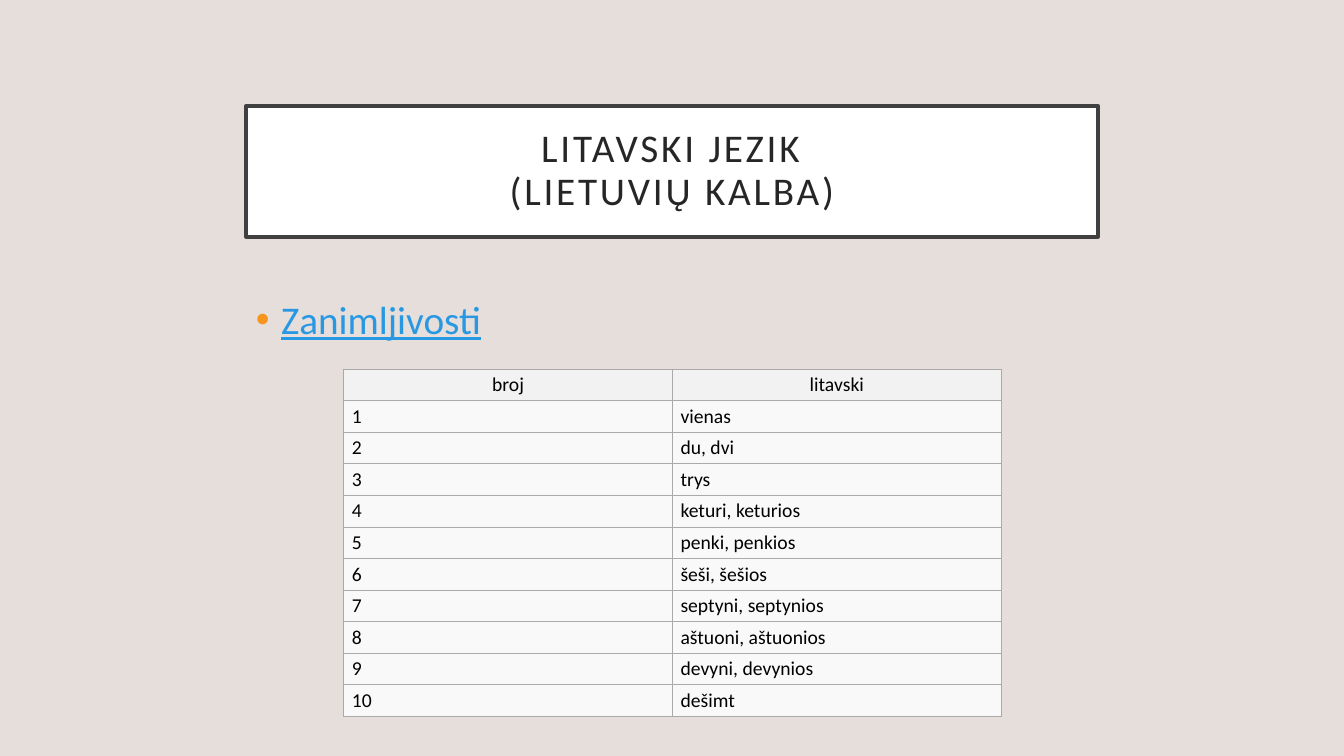
from lxml.etree import SubElement
from pptx import Presentation
from pptx.dml.color import RGBColor
from pptx.enum.shapes import MSO_SHAPE
from pptx.enum.text import MSO_ANCHOR, PP_ALIGN
from pptx.oxml.ns import qn
from pptx.util import Inches, Pt

COLORS = {
    "page": "E5DEDB", "white": "FFFFFF", "frame": "404040", "title": "262626",
    "link": "2998E3", "bullet": "F8931D", "border": "AAAAAA",
    "header": "F2F2F2", "row": "F9F9F9", "black": "000000",
}
NUMBERS = [
    "vienas", "du, dvi", "trys", "keturi, keturios", "penki, penkios",
    "šeši, šešios", "septyni, septynios", "aštuoni, aštuonios",
    "devyni, devynios", "dešimt",
]


def color(name):
    return RGBColor.from_string(COLORS[name])


def write(frame, text, size, ink, align=PP_ALIGN.LEFT, spacing=None,
          underline=None, line_spacing=None):
    """Fill the first paragraph; a newline in the text becomes a line break."""
    para = frame.paragraphs[0]
    para.text = text
    para.alignment = align
    para.line_spacing = line_spacing
    for span in para.runs:
        span.font.name = "Calibri"
        span.font.size = Pt(size)
        span.font.color.rgb = color(ink)
        span.font.underline = underline
        if spacing:
            span.font._element.set("spc", str(spacing * 100))
    return para


class SlideBuilder:
    def __init__(self, page):
        self.page = page
        page.background.fill.solid()
        page.background.fill.fore_color.rgb = color("page")

    def title(self, text, left, top, width, height):
        box = self.page.shapes.add_shape(
            MSO_SHAPE.RECTANGLE, Inches(left), Inches(top), Inches(width), Inches(height))
        box.shadow.inherit = False
        box.fill.solid()
        box.fill.fore_color.rgb = color("white")
        box.line.color.rgb = color("frame")
        box.line.width = Pt(2.5)
        frame = box.text_frame
        frame.word_wrap = True
        frame.vertical_anchor = MSO_ANCHOR.MIDDLE
        frame.margin_left = frame.margin_right = Inches(0.2)
        frame.margin_top = frame.margin_bottom = Inches(0.2)
        write(frame, text, 28, "title", PP_ALIGN.CENTER, spacing=2, line_spacing=0.9)

    def bullet(self, text, left, top, width, height):
        box = self.page.shapes.add_textbox(
            Inches(left), Inches(top), Inches(width), Inches(height))
        box.text_frame.word_wrap = True
        para = write(box.text_frame, text, 28, "link", underline=True)
        para.space_before = Pt(10)
        props = para._p.get_or_add_pPr()
        props.set("marL", str(Inches(0.25)))
        props.set("indent", str(Inches(-0.25)))
        SubElement(SubElement(props, qn("a:buClr")), qn("a:srgbClr"), val=COLORS["bullet"])
        SubElement(props, qn("a:buFont"), typeface="Arial")
        SubElement(props, qn("a:buChar"), char="•")

    def table(self, rows, left, top, column_width, row_height):
        columns = len(rows[0])
        table = self.page.shapes.add_table(
            len(rows), columns, Inches(left), Inches(top),
            Inches(column_width * columns), Inches(row_height * len(rows))).table
        for row_index, texts in enumerate(rows):
            table.rows[row_index].height = Inches(row_height)
            for column_index, text in enumerate(texts):
                self.cell(table.cell(row_index, column_index), text, row_index == 0)

    def cell(self, cell, text, is_header):
        cell.vertical_anchor = MSO_ANCHOR.MIDDLE
        cell.margin_left = cell.margin_right = Inches(0.08)
        cell.margin_top = cell.margin_bottom = Inches(0.04)
        props = cell._tc.get_or_add_tcPr()
        for side in "LRTB":
            line = SubElement(props, qn(f"a:ln{side}"), w=str(Pt(0.6)))
            SubElement(SubElement(line, qn("a:solidFill")), qn("a:srgbClr"),
                       val=COLORS["border"])
        cell.fill.solid()
        cell.fill.fore_color.rgb = color("header" if is_header else "row")
        write(cell.text_frame, text, 14, "black",
              PP_ALIGN.CENTER if is_header else PP_ALIGN.LEFT)


def main():
    deck = Presentation()
    deck.slide_width, deck.slide_height = Inches(13.33), Inches(7.5)
    builder = SlideBuilder(deck.slides.add_slide(deck.slide_layouts[6]))
    builder.title("LITAVSKI JEZIK\n(LIETUVIŲ KALBA)", 2.44, 1.05, 8.45, 1.3)
    builder.bullet("Zanimljivosti", 2.44, 2.88, 8.45, 3.39)
    counted = [(str(number), word) for number, word in enumerate(NUMBERS, 1)]
    builder.table([("broj", "litavski"), *counted], 3.41, 3.66, 3.26, 0.31)
    deck.save("out.pptx")


if __name__ == "__main__":
    main()
